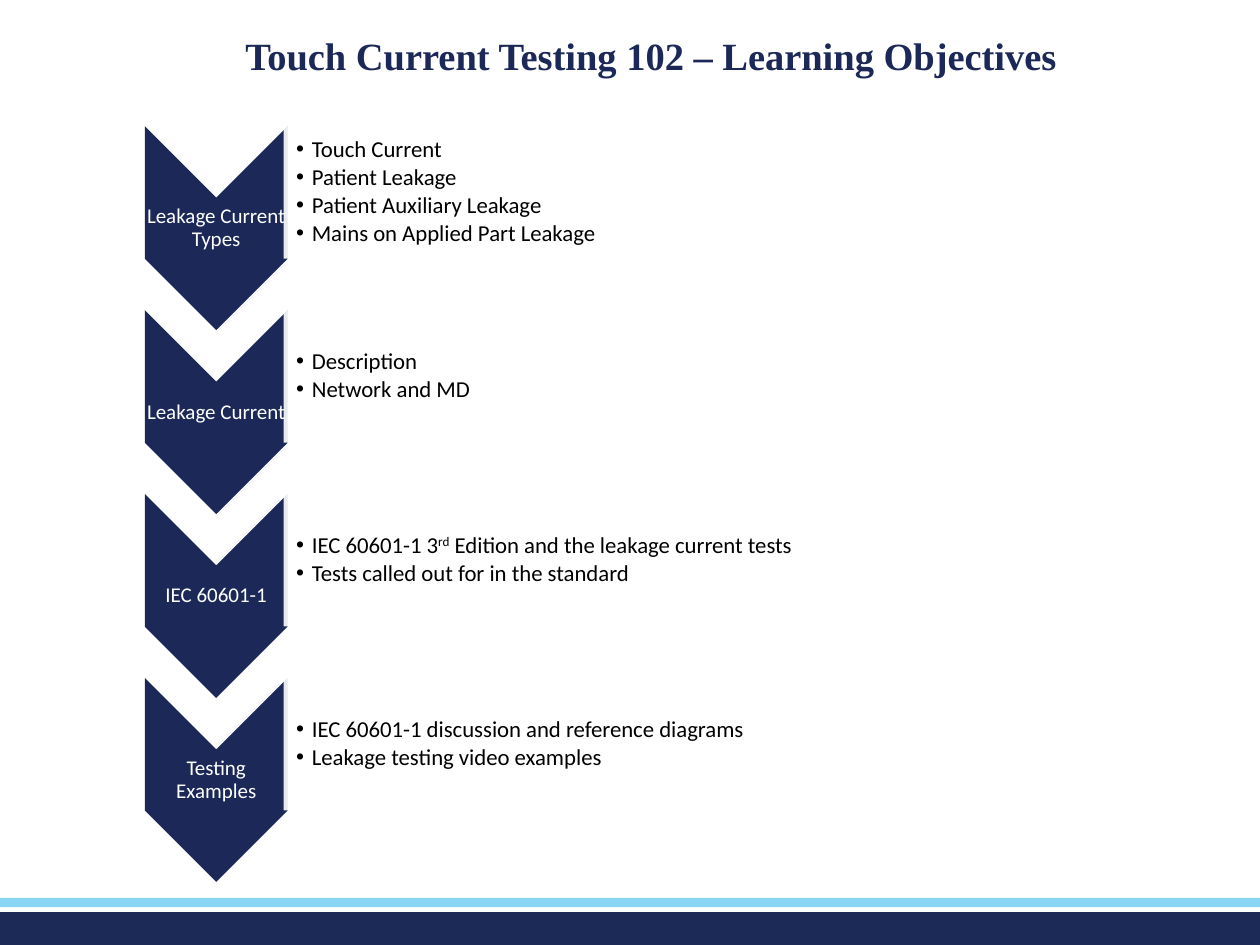
from lxml.etree import SubElement
from pptx import Presentation
from pptx.dml.color import RGBColor
from pptx.enum.shapes import MSO_SHAPE as Shape
from pptx.enum.text import MSO_ANCHOR as Anchor, MSO_AUTO_SIZE as AutoSize, PP_ALIGN as Align
from pptx.oxml.ns import qn
from pptx.util import Pt

COLORS = {"navy": "1C2958", "footer": "1C2A58", "sky": "88D6F4",
          "white": "FFFFFF", "black": "000000"}
TITLE_FONT = {"name": "Times New Roman", "size": Pt(22), "bold": True}
LABEL_FONT = {"name": "Calibri", "size": Pt(12), "bold": False}
LIST_FONT = {"name": "Calibri", "size": Pt(13), "bold": False}
TIGHT = {"margin_left": Pt(0.7), "margin_right": Pt(0.7),
         "margin_top": Pt(0.7), "margin_bottom": Pt(0.7)}
FRAME = {"word_wrap": True, "auto_size": AutoSize.NONE, "vertical_anchor": Anchor.MIDDLE}

ROWS = [
    ("Leakage Current Types", ["Touch Current", "Patient Leakage", "Patient Auxiliary Leakage",
                               "Mains on Applied Part Leakage"]),
    ("Leakage Current", ["Description", "Network and MD"]),
    ("IEC 60601-1", [("IEC 60601-1 3", "rd", " Edition and the leakage current tests"),
                     "Tests called out for in the standard"]),
    ("Testing Examples", ["IEC 60601-1 discussion and reference diagrams",
                          "Leakage testing video examples"]),
]


def apply(target, values):
    for name, value in values.items():
        setattr(target, name, value)


def style_font(font, values, color):
    apply(font, values)
    font.color.rgb = RGBColor.from_string(COLORS[color])


def place(shape, left, top, width, height):
    apply(shape, {"left": Pt(left), "top": Pt(top), "width": Pt(width), "height": Pt(height)})


def add_filled(page, kind, color, left, top, width, height, turned=False):
    if turned:
        left, top = left + (width - height) / 2, top + (height - width) / 2
        width, height = height, width
    shape = page.shapes.add_shape(kind, Pt(left), Pt(top), Pt(width), Pt(height))
    shape.rotation = 90 if turned else 0
    shape.shadow.inherit = False
    shape.fill.solid()
    shape.fill.fore_color.rgb = RGBColor.from_string(COLORS[color])
    shape.line.fill.background()
    return shape


def add_footer(page, width, bottom):
    add_filled(page, Shape.RECTANGLE, "footer", 0, bottom - 18.7, width, 18.7)
    add_filled(page, Shape.RECTANGLE, "sky", 0, bottom - 27, width, 5.4)


def fill_title(title, left, top, width, height):
    place(title, left, top, width, height)
    apply(title.text_frame, FRAME)
    para = title.text_frame.paragraphs[0]
    para.text = "Touch Current Testing 102 – Learning Objectives"
    apply(para, {"alignment": Align.CENTER, "line_spacing": 0.9})
    style_font(para.font, TITLE_FONT, "navy")


def add_step(page, label, left, top, width, height):
    add_filled(page, Shape.CHEVRON, "navy", left, top, width, height, turned=True)
    notch = width / 2
    box = page.shapes.add_textbox(Pt(left), Pt(top + notch), Pt(width), Pt(height - 2 * notch))
    apply(box.text_frame, FRAME | TIGHT)
    para = box.text_frame.paragraphs[0]
    para.text = label
    apply(para, {"alignment": Align.CENTER, "line_spacing": 0.9})
    style_font(para.font, LABEL_FONT, "white")


def add_bullet(para, item):
    apply(para, {"level": 1, "alignment": Align.LEFT, "line_spacing": 0.9,
                 "space_before": Pt(0), "space_after": Pt(1.95)})
    properties = para._p.get_or_add_pPr()
    properties.set("marL", str(Pt(9)))
    properties.set("indent", str(Pt(-9)))
    SubElement(properties, qn("a:buChar")).set("char", "•")
    for index, text in enumerate([item] if isinstance(item, str) else item):
        span = para.add_run()
        span.text = text
        style_font(span.font, LIST_FONT, "black")
        if index == 1:
            span.font._element.set("baseline", "30000")


def add_list(page, body, items, left, top, width, height):
    panel = add_filled(page, Shape.ROUND_2_SAME_RECTANGLE, "white",
                       left, top, width, height, turned=True)
    color = panel.fill._xPr.find(qn("a:solidFill"))[0]
    SubElement(color, qn("a:alpha")).set("val", "90000")
    panel.element.addnext(body.element)
    place(body, left, top + 3.7, width - 3.7, height - 7.4)
    frame = body.text_frame
    apply(frame, FRAME | TIGHT | {"margin_left": Pt(7.2)})
    for index, item in enumerate(items):
        add_bullet(frame.add_paragraph() if index else frame.paragraphs[0], item)


def add_objectives(page, bodies, left, top, width, pitch):
    step_width, step_height, overlap = 81.5, 116.5, 2.3
    list_left = left + step_width - overlap
    for index, ((label, items), body) in enumerate(zip(ROWS, bodies)):
        row_top = top + index * pitch
        add_step(page, label, left, row_top, step_width, step_height)
        add_list(page, body, items, list_left, row_top, left + width - list_left, 75.6)


def main():
    deck = Presentation()
    deck.slide_width, deck.slide_height = Pt(720), Pt(540)
    page = deck.slides.add_slide(deck.slide_layouts.get_by_name("Comparison"))
    title, *bodies = page.placeholders
    add_footer(page, 720, 540)
    add_objectives(page, bodies, 82.8, 72.2, 579.6, 105.1)
    fill_title(title, 72, 12.2, 600, 41.8)
    deck.save("out.pptx")


if __name__ == "__main__":
    main()
